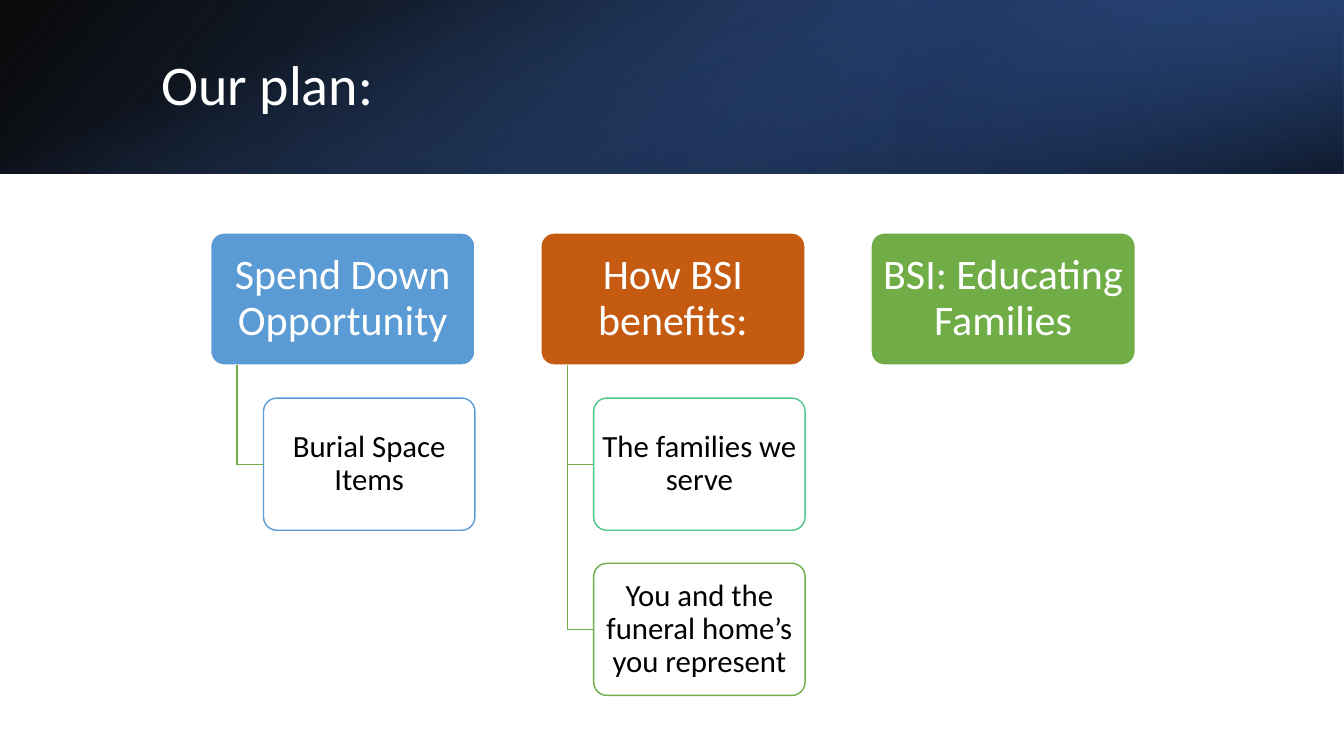
from lxml import etree
from pptx import Presentation
from pptx.dml.color import RGBColor
from pptx.enum.shapes import MSO_SHAPE as Shape
from pptx.enum.text import MSO_ANCHOR as Anchor, PP_ALIGN as Align
from pptx.oxml import parse_xml
from pptx.oxml.ns import nsdecls, qn
from pptx.util import Cm, Pt

COLORS = {
    "white": "FFFFFF", "black": "000000", "blue": "5B9BD5", "rust": "C55A11",
    "green": "70AD47", "teal": "4DC58D", "navy": "203864", "royal": "2F5597",
    "azure": "4472C4",
}
FONT = "Calibri"
SLIDE_W, SLIDE_H, BANNER_H = 33.87, 19.05, 4.37
TITLE_BOX = (3.81, 0.97, 27.89, 2.44)
PLAN_BOX = (5.31, 5.87)
HEAD_W, CARD_H, COLUMN_PITCH = 6.66, 3.33, 8.32
INDENT = HEAD_W / 10
ROW_PITCH = 1.25 * CARD_H

PLAN = [
    ("Spend Down Opportunity", "blue", [("Burial Space Items", "blue")]),
    ("How BSI benefits:", "rust", [
        ("The families we serve", "teal"),
        ("You and the funeral home’s you represent", "green"),
    ]),
    ("BSI: Educating Families", "green", []),
]


def rgb(name):
    return RGBColor.from_string(COLORS[name])


def write(shape, text, size, color, align=Align.CENTER, margins=None):
    frame = shape.text_frame
    frame.word_wrap = True
    frame.vertical_anchor = Anchor.MIDDLE
    if margins:
        side, end = map(Cm, margins)
        frame.margin_left = frame.margin_right = side
        frame.margin_top = frame.margin_bottom = end
    paragraph = frame.paragraphs[0]
    paragraph.text = text
    paragraph.alignment = align
    paragraph.line_spacing = 0.9
    font = paragraph.runs[0].font
    font.name, font.size, font.color.rgb = FONT, Pt(size), rgb(color)


def add_gradient(slide, box, stops, angle, rotation=0, flip=False):
    """Add a borderless rectangle; each stop is (position %, colour, opacity %)."""
    panel = slide.shapes.add_shape(Shape.RECTANGLE, *map(Cm, box))
    panel.shadow.inherit = False
    panel.line.fill.background()
    panel.rotation = rotation
    properties = panel._element.spPr
    if flip:
        properties.find(qn("a:xfrm")).set("flipH", "1")
    marks = "".join(
        f'<a:gs pos="{position * 1000}"><a:srgbClr val="{COLORS[color]}">'
        f'<a:alpha val="{opacity * 1000}"/></a:srgbClr></a:gs>'
        for position, color, opacity in stops)
    panel.fill.background()
    properties.replace(properties.find(qn("a:noFill")), parse_xml(
        f'<a:gradFill {nsdecls("a")} rotWithShape="1"><a:gsLst>{marks}</a:gsLst>'
        f'<a:lin ang="{angle * 60000}" scaled="0"/></a:gradFill>'))


def add_banner(slide, width, height):
    add_gradient(slide, (0, 0, width, height),
                 [(0, "black", 96), (100, "royal", 100)], 140, flip=True)
    add_gradient(slide, (width * 2 / 3, 0, width / 3, height),
                 [(19, "navy", 68), (100, "azure", 79)], 320, rotation=180, flip=True)
    # A quarter turn about the centre makes this tall panel cover the banner.
    offset = (width - height) / 2
    add_gradient(slide, (offset, -offset, height, width),
                 [(23, "azure", 0), (99, "black", 74)], 340, rotation=90)


def add_title(slide, box, text):
    title = slide.shapes.title
    title.left, title.top, title.width, title.height = map(Cm, box)
    write(title, text, 40, "white", align=Align.LEFT)
    # Later siblings are in front, so the title goes above the banner.
    slide.shapes._spTree.append(title._element)


def add_card(slide, box, text, fill, line, size, color, margins, opacity=100):
    card = slide.shapes.add_shape(Shape.ROUNDED_RECTANGLE, *map(Cm, box))
    card.shadow.inherit = False
    card.adjustments[0] = 0.1
    card.fill.solid()
    card.fill.fore_color.rgb = rgb(fill)
    if opacity < 100:
        tint = card._element.spPr.find(qn("a:solidFill"))[0]
        etree.SubElement(tint, qn("a:alpha")).set("val", str(opacity * 1000))
    card.line.color.rgb = rgb(line)
    card.line.width = Pt(1)
    write(card, text, size, color, margins=margins)


def add_branch(slide, left, top, bottom):
    """Draw the elbow from a heading down and right to one of its cards."""
    outline = slide.shapes.build_freeform(Cm(left), Cm(top))
    outline.add_line_segments(
        [(Cm(left), Cm(bottom)), (Cm(left + INDENT), Cm(bottom))], close=False)
    branch = outline.convert_to_shape()
    branch.shadow.inherit = False
    branch.fill.background()
    branch.line.color.rgb = rgb("green")
    branch.line.width = Pt(1)


def add_column(slide, left, top, heading, color, items):
    add_card(slide, (left, top, HEAD_W, CARD_H), heading, color, "white",
             30, "white", (0.15, 0.1))
    for row, (item, outline) in enumerate(items, start=1):
        item_top = top + row * ROW_PITCH
        add_branch(slide, left + INDENT, top + CARD_H, item_top + CARD_H / 2)
        add_card(slide, (left + 2 * INDENT, item_top, 0.8 * HEAD_W, CARD_H), item,
                 "white", outline, 22, "black", (0.12, 0.08), opacity=90)


def add_plan(slide, left, top):
    for index, column in enumerate(PLAN):
        add_column(slide, left + index * COLUMN_PITCH, top, *column)


def main():
    deck = Presentation()
    deck.slide_width, deck.slide_height = Cm(SLIDE_W), Cm(SLIDE_H)
    slide = deck.slides.add_slide(deck.slide_layouts[5])
    slide.background.fill.solid()
    slide.background.fill.fore_color.rgb = rgb("white")
    add_banner(slide, SLIDE_W, BANNER_H)
    add_title(slide, TITLE_BOX, "Our plan:")
    add_plan(slide, *PLAN_BOX)
    deck.save("out.pptx")


if __name__ == "__main__":
    main()
